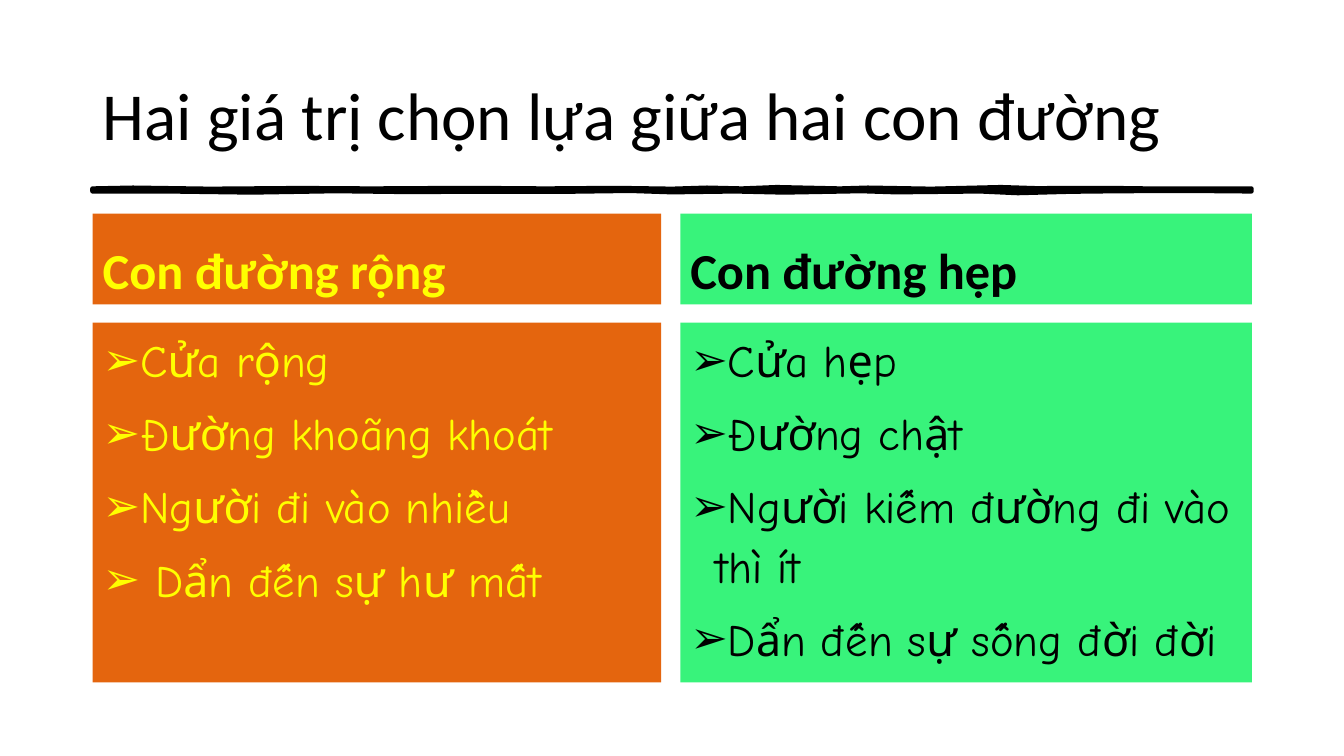
from lxml import etree
from pptx import Presentation
from pptx.dml.color import RGBColor
from pptx.enum.shapes import MSO_SHAPE
from pptx.enum.text import MSO_ANCHOR, PP_ALIGN
from pptx.oxml.ns import qn
from pptx.util import Pt

RECTANGLE = MSO_SHAPE.RECTANGLE
TOP, MIDDLE, BOTTOM = MSO_ANCHOR.TOP, MSO_ANCHOR.MIDDLE, MSO_ANCHOR.BOTTOM
LEFT = PP_ALIGN.LEFT

BLACK, YELLOW, ORANGE, GREEN = "000000", "FFFF00", "E4650E", "38F37B"
MARGIN = 66.24


def rgb(hex_color):
    return RGBColor.from_string(hex_color)


def write_lines(shape, lines, anchor, size, font_name, color, bold=False, bullet=None):
    """Fill a shape with one paragraph per line, bulleted if a bullet is given."""
    frame = shape.text_frame
    frame.word_wrap = True
    frame.vertical_anchor = anchor
    frame.text = "\n".join(lines)
    for paragraph in frame.paragraphs:
        paragraph.alignment = LEFT
        paragraph.line_spacing = 1.1
        paragraph.space_before = Pt(10)
        if bullet:
            properties = paragraph._p.get_or_add_pPr()
            properties.set("marL", str(Pt(18)))
            properties.set("indent", str(Pt(-18)))
            etree.SubElement(properties, qn("a:buFont"), typeface="Arial")
            etree.SubElement(properties, qn("a:buChar"), char=bullet)
        font = paragraph.font
        font.size = Pt(size)
        font.name = font_name
        font.bold = bold
        font.color.rgb = rgb(color)


presentation = Presentation()
presentation.slide_width, presentation.slide_height = Pt(960), Pt(540)
slide = presentation.slides.add_slide(presentation.slide_layouts[6])
shapes = slide.shapes

# Hand-drawn rule under the title: upper edge, then lower edge back
upper_edge = [(66, 134.6), (95, 134), (150, 134.8), (215, 134.3), (265, 134.6),
              (335, 134.2), (390, 134.6), (440, 134.2), (480, 134.8), (505, 134),
              (530, 134.6), (555, 133.6), (600, 134.6), (620, 134), (665, 134.8),
              (715, 133.6), (740, 134.4), (790, 134.2), (820, 134.6), (894, 134.6)]
lower_edge = [(894, 136.8), (850, 136.4), (800, 136.6), (765, 137), (727, 138),
              (700, 136.8), (640, 137.4), (615, 136.6), (560, 137.6), (525, 136.8),
              (480, 137.4), (450, 136.4), (405, 137), (340, 137), (290, 137.2),
              (240, 136.6), (180, 137.6), (120, 136.8), (66, 136.8)]
outline = [(Pt(x), Pt(y)) for x, y in upper_edge + lower_edge]
builder = shapes.build_freeform(*outline[0])
builder.add_line_segments(outline[1:], close=True)
title_rule = builder.convert_to_shape()
title_rule.shadow.inherit = False
title_rule.fill.solid()
title_rule.fill.fore_color.rgb = rgb(BLACK)
title_rule.line.color.rgb = rgb(BLACK)
title_rule.line.width = Pt(3)

title = shapes.add_textbox(Pt(MARGIN), Pt(28.8), Pt(828), Pt(104.4))
write_lines(title, ["Hai giá trị chọn lựa giữa hai con đường"], MIDDLE, 48, "Calibri", BLACK)
title_paragraph = title.text_frame.paragraphs[0]
title_paragraph.line_spacing = 1.0
title_paragraph.space_before = Pt(0)

roads = [
    (MARGIN, 406.08, ORANGE, YELLOW, "Con đường rộng",
     ["Cửa rộng", "Đường khoãng khoát", "Người đi vào nhiều", " Dẩn đến sự hư mất"]),
    (486, 408.24, GREEN, BLACK, "Con đường hẹp",
     ["Cửa hẹp", "Đường chật", "Người kiếm đường đi vào thì ít", "Dẩn đến sự sống đời đời"]),
]
for left, width, fill_color, text_color, heading, traits in roads:
    heading_box = shapes.add_shape(RECTANGLE, Pt(left), Pt(152.64), Pt(width), Pt(64.8))
    traits_box = shapes.add_shape(RECTANGLE, Pt(left), Pt(230.4), Pt(width), Pt(257.04))
    for box in (heading_box, traits_box):
        box.shadow.inherit = False
        box.fill.solid()
        box.fill.fore_color.rgb = rgb(fill_color)
        box.line.fill.background()
    write_lines(heading_box, [heading], BOTTOM, 36, "Calibri", text_color, bold=True)
    write_lines(traits_box, traits, TOP, 32, "Comic Neue", text_color, bullet="➢")

presentation.save("out.pptx")
